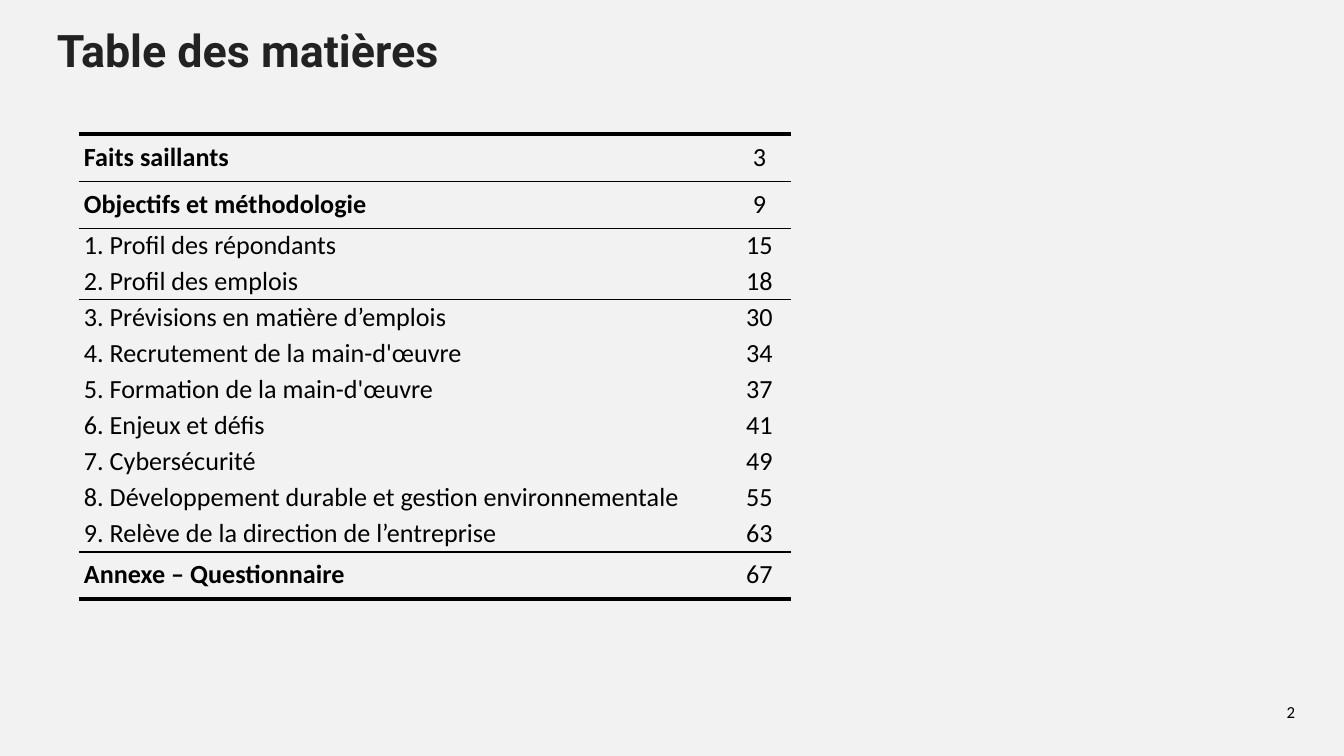
from lxml import etree
from pptx import Presentation
from pptx.dml.color import RGBColor
from pptx.enum.text import MSO_ANCHOR, PP_ALIGN
from pptx.oxml.ns import qn
from pptx.util import Pt

EMU_PER_PX = 914400 / 134.4
LEFT, CENTER = PP_ALIGN.LEFT, PP_ALIGN.CENTER
MIDDLE, BOTTOM = MSO_ANCHOR.MIDDLE, MSO_ANCHOR.BOTTOM
BACKGROUND = RGBColor(0xF2, 0xF2, 0xF2)
INK = RGBColor(0x22, 0x22, 0x23)
BLACK = RGBColor(0, 0, 0)
PLAIN_TABLE = "{2D5ABB26-0587-4C30-8999-92F81FD0307C}"
THICK, MEDIUM, THIN = 2.25, 1, 0.5

# Each row: (titles, pages, is main heading, rule above, rule below)
CONTENTS = [
    (["Faits saillants"], ["3"], True, THICK, THIN),
    (["Objectifs et méthodologie"], ["9"], True, THIN, THIN),
    (["1. Profil des répondants", "2. Profil des emplois"], ["15", "18"], False, THIN, None),
    (["3. Prévisions en matière d’emplois"], ["30"], False, None, None),
    (["4. Recrutement de la main-d'œuvre"], ["34"], False, None, None),
    (["5. Formation de la main-d'œuvre"], ["37"], False, None, None),
    (["6. Enjeux et défis"], ["41"], False, None, None),
    (["7. Cybersécurité"], ["49"], False, None, None),
    (["8. Développement durable et gestion environnementale"], ["55"], False, None, None),
    (["9. Relève de la direction de l’entreprise"], ["63"], False, None, MEDIUM),
    (["Annexe – Questionnaire"], ["67"], True, MEDIUM, THICK),
]


def px(length):
    return round(length * EMU_PER_PX)


class ContentsSlide:
    body_font = "Calibri"
    title_font = "Roboto"
    body_size = 14

    def __init__(self, deck):
        self.slide = deck.slides.add_slide(deck.slide_layouts[6])
        fill = self.slide.background.fill
        fill.solid()
        fill.fore_color.rgb = BACKGROUND

    def style(self, paragraph, font, size, color, bold, align):
        paragraph.alignment = align
        paragraph.font.name = font
        paragraph.font.size = Pt(size)
        paragraph.font.color.rgb = color
        paragraph.font.bold = bold

    def text(self, words, box, inset, anchor, font, size, color, bold=False, align=LEFT):
        frame = self.slide.shapes.add_textbox(*map(px, box)).text_frame
        frame.word_wrap = True
        frame.vertical_anchor = anchor
        frame.margin_left = frame.margin_right = px(inset[0])
        frame.margin_top = frame.margin_bottom = px(inset[1])
        paragraph = frame.paragraphs[0]
        paragraph.text = words
        self.style(paragraph, font, size, color, bold, align)

    def rule(self, cell, side, width):
        line = etree.SubElement(cell._tc.get_or_add_tcPr(), qn(f"a:{side}"), w=str(Pt(width)))
        fill = etree.SubElement(line, qn("a:solidFill"))
        etree.SubElement(fill, qn("a:srgbClr"), val=str(BLACK))

    def cell(self, cell, lines, bold, align, spacing, above, below):
        cell.margin_left = cell.margin_right = px(5)
        cell.margin_top = cell.margin_bottom = px(3)
        cell.vertical_anchor = MIDDLE
        for side, width in (("lnT", above), ("lnB", below)):
            if width:
                self.rule(cell, side, width)
        cell.fill.background()
        cell.text = "\n".join(lines)
        for index, paragraph in enumerate(cell.text_frame.paragraphs):
            paragraph.line_spacing = 0.9
            paragraph.space_before = Pt(spacing if index else 0)
            paragraph.space_after = Pt(spacing)
            self.style(paragraph, self.body_font, self.body_size, BLACK, bold, align)

    def contents(self, rows, left, top, widths):
        heights = [47 if main else 36 * len(titles) for titles, _, main, _, _ in rows]
        table = self.slide.shapes.add_table(
            len(rows), len(widths), px(left), px(top), px(sum(widths)), px(sum(heights))).table
        table._tbl.tblPr.find(qn("a:tableStyleId")).text = PLAIN_TABLE
        table.first_row = table.horz_banding = False
        for column, width in zip(table.columns, widths):
            column.width = px(width)
        for index, (titles, pages, main, above, below) in enumerate(rows):
            table.rows[index].height = px(heights[index])
            spacing = 0 if main else 2
            self.cell(table.cell(index, 0), titles, main, LEFT, spacing, above, below)
            self.cell(table.cell(index, 1), pages, False, CENTER, spacing, above, below)


def main():
    deck = Presentation()
    deck.slide_width, deck.slide_height = px(1344), px(756)
    page = ContentsSlide(deck)

    # Page number
    page.text("2", (1257, 689, 68, 40), (13, 7), BOTTOM, page.body_font, 9, BLACK, align=CENTER)

    # Title
    page.text("Table des matières", (47, 26, 1261, 48), (10, 5), MIDDLE,
              page.title_font, 24, INK, bold=True)

    # Table of contents
    page.contents(CONTENTS, 79, 134, (649, 63))

    deck.save("out.pptx")


if __name__ == "__main__":
    main()
